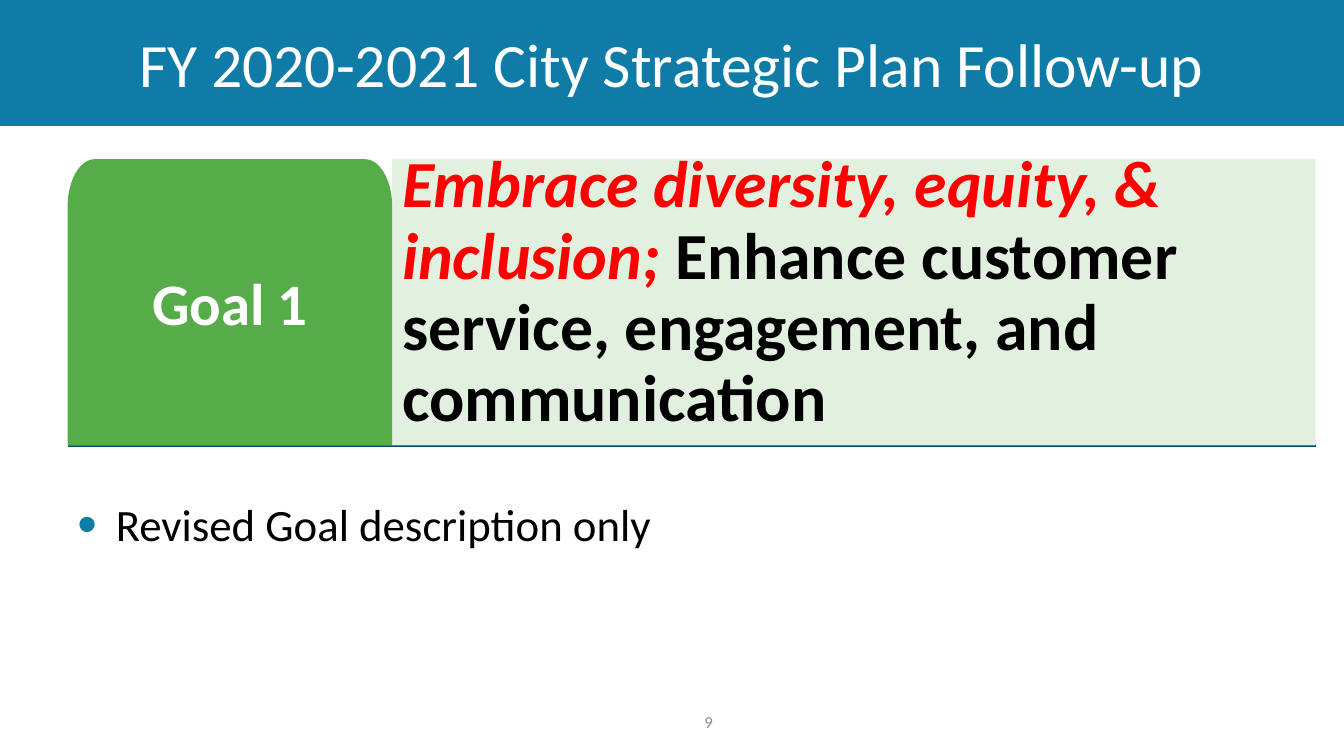
import math

import pptx
import pptx.dml.color
import pptx.enum.shapes
import pptx.enum.text
import pptx.util
from lxml import etree
from pptx.oxml.ns import qn
from pptx.util import Inches

ALIGN = pptx.enum.text.PP_ALIGN
ANCHOR = pptx.enum.text.MSO_ANCHOR


def colour(value):
    return pptx.dml.color.RGBColor.from_string(value)


class GoalSlide:
    FONT = "Calibri"
    BLUE, GREEN, PALE, TEAL = "0F7CA7", "56AC49", "E2F1DF", "024C61"
    WHITE, BLACK, RED, GREY = "FFFFFF", "000000", "FF0000", "8C8C8C"

    def __init__(self, deck):
        self.slide = deck.slides.add_slide(deck.slide_layouts[5])

    def style(self, font, size, ink, bold=False):
        font.name, font.size, font.bold = self.FONT, pptx.util.Pt(size), bold
        font.color.rgb = colour(ink)

    def frame(self, shape, anchor, insets=(0.1, 0.05, 0.1, 0.05)):
        frame = shape.text_frame
        frame.word_wrap = True
        frame.auto_size = pptx.enum.text.MSO_AUTO_SIZE.NONE
        frame.vertical_anchor = anchor
        (frame.margin_left, frame.margin_top,
         frame.margin_right, frame.margin_bottom) = map(Inches, insets)
        return frame.paragraphs[0]

    def fill(self, shape, paint):
        shape.shadow.inherit = False
        shape.fill.solid()
        shape.fill.fore_color.rgb = colour(paint)
        shape.line.fill.background()

    def title(self, words, width, height):
        banner = self.slide.shapes.title
        banner.left, banner.top = 0, 0
        banner.width, banner.height = Inches(width), Inches(height)
        banner.fill.solid()
        banner.fill.fore_color.rgb = colour(self.BLUE)
        paragraph = self.frame(banner, ANCHOR.MIDDLE)
        paragraph.text, paragraph.alignment = words, ALIGN.CENTER
        self.style(paragraph.font, 44, self.WHITE)

    def rule(self, left, right, y):
        rule = self.slide.shapes.add_connector(
            pptx.enum.shapes.MSO_CONNECTOR.STRAIGHT,
            Inches(left), Inches(y), Inches(right), Inches(y))
        rule.line.color.rgb = colour(self.TEAL)
        rule.line.width = pptx.util.Pt(2)
        etree.SubElement(rule._element.spPr, qn("a:effectLst"))

    def description(self, left, top, width, height, parts):
        panel = self.slide.shapes.add_shape(
            pptx.enum.shapes.MSO_SHAPE.RECTANGLE,
            Inches(left), Inches(top), Inches(width), Inches(height))
        self.fill(panel, self.PALE)
        paragraph = self.frame(panel, ANCHOR.BOTTOM, (0.1,) * 4)
        paragraph.alignment, paragraph.line_spacing = ALIGN.LEFT, 0.9
        for words, ink, italic in parts:
            run = paragraph.add_run()
            run.text = words
            self.style(run.font, 47, ink, bold=True)
            run.font.italic = italic

    def goal_tab(self, left, top, width, height, words):
        # Elliptical top corners, square bottom corners
        radius_x, radius_y = width / 12, height / 6
        angles = [math.radians(step * 5) for step in range(19)]
        right_arc = [(left + width - radius_x * (1 - math.sin(a)),
                      top + radius_y * (1 - math.cos(a))) for a in angles]
        left_arc = [(2 * left + width - x, y) for x, y in reversed(right_arc)]
        base = [(left + width, top + height), (left, top + height)]
        points = [(Inches(x), Inches(y)) for x, y in right_arc + base + left_arc]
        builder = self.slide.shapes.build_freeform(*points[0])
        builder.add_line_segments(points[1:], close=True)
        tab = builder.convert_to_shape()
        self.fill(tab, self.GREEN)
        paragraph = self.frame(tab, ANCHOR.MIDDLE, (0.17, 0.17, 0.17, 0.09))
        paragraph.text, paragraph.alignment = words, ALIGN.CENTER
        paragraph.line_spacing = 0.9
        self.style(paragraph.font, 42, self.WHITE, bold=True)

    def text(self, left, top, width, height, words, size, ink,
             align=ALIGN.LEFT, anchor=ANCHOR.TOP, bullet=False):
        box = self.slide.shapes.add_textbox(
            Inches(left), Inches(top), Inches(width), Inches(height))
        paragraph = self.frame(box, anchor)
        paragraph.text, paragraph.alignment = words, align
        if bullet:
            self.bullet(paragraph)
        self.style(paragraph.font, size, ink)

    def bullet(self, paragraph):
        properties = paragraph._p.get_or_add_pPr()
        properties.set("marL", str(Inches(0.38)))
        properties.set("indent", str(-Inches(0.38)))
        paint = etree.SubElement(properties, qn("a:buClr"))
        etree.SubElement(paint, qn("a:srgbClr"), val=self.BLUE)
        etree.SubElement(properties, qn("a:buSzPct"), val="125000")
        etree.SubElement(properties, qn("a:buFont"), typeface="Arial")
        etree.SubElement(properties, qn("a:buChar"), char="•")


def main():
    deck = pptx.Presentation()
    deck.slide_width, deck.slide_height = Inches(13.33), Inches(7.5)
    page = GoalSlide(deck)

    # Title banner
    page.title("FY 2020-2021 City Strategic Plan Follow-up", 13.33, 1.25)

    # Revision note and page number
    page.text(0.67, 4.88, 12, 1.62, "Revised Goal description only",
              32, page.BLACK, bullet=True)
    page.text(6.17, 6.96, 1, 0.4, "9", 12, page.GREY,
              align=ALIGN.RIGHT, anchor=ANCHOR.MIDDLE)

    # Goal with its description
    left, top, height = 0.67, 1.58, 2.84
    tab_width, panel_width = 3.22, 9.16
    panel_left = left + tab_width
    page.rule(left, panel_left + panel_width, top + height)
    page.description(panel_left, top, panel_width, height, [
        ("Embrace diversity, equity, & inclusion; ", page.RED, True),
        ("Enhance customer service, engagement, and communication",
         page.BLACK, False)])
    page.goal_tab(left, top, tab_width, height, "Goal 1")

    deck.save("out.pptx")


if __name__ == "__main__":
    main()
